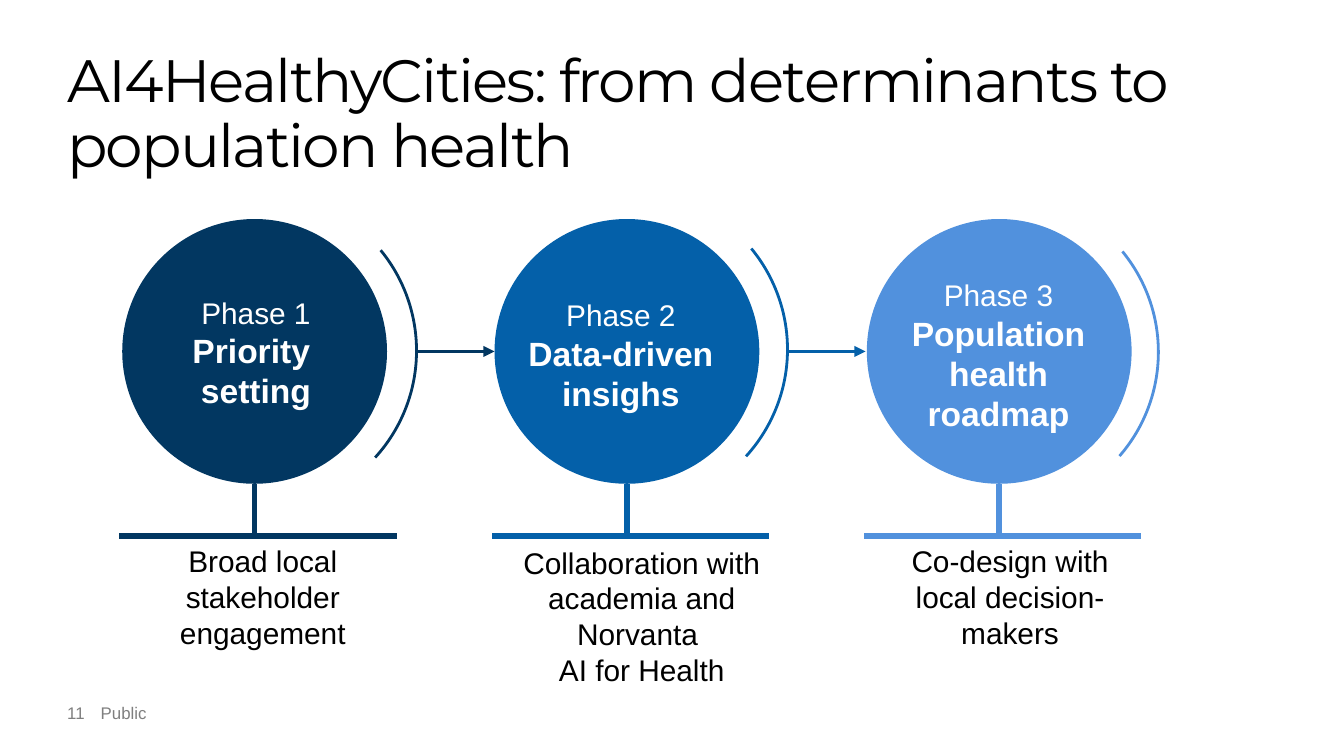
from dataclasses import dataclass

from lxml.etree import SubElement
from pptx import Presentation
from pptx.dml.color import RGBColor
from pptx.enum.shapes import MSO_CONNECTOR, MSO_SHAPE
from pptx.enum.text import MSO_ANCHOR, MSO_AUTO_SIZE, PP_ALIGN
from pptx.oxml.ns import qn
from pptx.shapes.connector import Connector
from pptx.slide import Slide
from pptx.text.text import TextFrame
from pptx.util import Inches, Pt

COLORS = {
    "navy": "023761",
    "blue": "0460A9",
    "sky": "5191DD",
    "black": "000000",
    "white": "FFFFFF",
    "gray": "7F7F7F",
}

LEFT, TOP, SIZE = 0.91, 1.63, 1.97
PITCH = 2.77
BAR_TOP, BAR_WIDTH = 3.99, 2.02
ARC_SIZE = 2.36
ARROW = 0.58

Box = tuple[float, float, float, float]
Pair = tuple[float, float]


@dataclass
class Phase:
    color: str
    lines: list[str]
    head: Box
    note: str
    place: Box
    spot: Pair
    sweep: Pair


PHASES = [
    Phase("navy", ["Phase 1", "Priority ", "setting"], (1.12, 2.14, 1.57, 1.01),
          "Broad local stakeholder engagement", (0.91, 3.99, 2.09, 0.91),
          (0.74, 1.43), (192.41, 25.41)),
    Phase("blue", ["Phase 2", "Data-driven insighs"], (3.74, 2.16, 1.76, 0.98),
          "Collaboration with academia and Norvanta \nAI for Health",
          (3.68, 4, 2.19, 1.18), (3.5, 1.42), (192.31, 25.44)),
    Phase("sky", ["Phase 3", "Population health roadmap"], (6.55, 2.01, 1.76, 1.28),
          "Co-design with local decision-makers", (6.47, 3.99, 2.09, 0.91),
          (6.26, 1.44), (192.39, 24.6)),
]


def rgb(name: str) -> RGBColor:
    return RGBColor.from_string(COLORS[name])


def clear_insets(frame: TextFrame) -> None:
    frame.margin_left = frame.margin_right = 0
    frame.margin_top = frame.margin_bottom = 0


def add_text(slide: Slide, box: Box, lines: list[str], size: int, color: str) -> TextFrame:
    frame = slide.shapes.add_textbox(*map(Inches, box)).text_frame
    frame.word_wrap = True
    for i, line in enumerate(lines):
        para = frame.add_paragraph() if i else frame.paragraphs[0]
        para.text = line
        para.alignment = PP_ALIGN.CENTER
        for run in para.runs:
            run.font.name = "Arial"
            run.font.size = Pt(size)
            run.font.color.rgb = rgb(color)
    frame.auto_size = MSO_AUTO_SIZE.SHAPE_TO_FIT_TEXT
    return frame


def add_line(slide: Slide, start: Pair, end: Pair, color: str, width: float) -> Connector:
    line = slide.shapes.add_connector(
        MSO_CONNECTOR.STRAIGHT, *map(Inches, (*start, *end)))
    line.line.color.rgb = rgb(color)
    line.line.width = Pt(width)
    SubElement(line._element.spPr, qn("a:effectLst"))
    return line


def add_phase(slide: Slide, phase: Phase, left: float, last: bool) -> None:
    color = phase.color
    mid_x, mid_y = left + SIZE / 2, TOP + SIZE / 2
    disc = slide.shapes.add_shape(
        MSO_SHAPE.OVAL, *map(Inches, (left, TOP, SIZE, SIZE)))
    disc.shadow.inherit = False
    disc.fill.solid()
    disc.fill.fore_color.rgb = rgb(color)
    disc.line.fill.background()

    add_line(slide, (mid_x, TOP + SIZE), (mid_x, BAR_TOP), color, 3)
    bar = add_line(slide, (left, BAR_TOP), (left + BAR_WIDTH, BAR_TOP), color, 3)
    bar.line._get_or_add_ln().set("cap", "sq")

    arc = slide.shapes.add_shape(
        MSO_SHAPE.ARC, *map(Inches, (*phase.spot, ARC_SIZE, ARC_SIZE)))
    arc.shadow.inherit = False
    arc.adjustments[0], arc.adjustments[1] = phase.sweep
    arc.fill.background()
    arc.line.color.rgb = rgb(color)
    arc.line.width = Pt(1.5)

    if not last:
        edge = phase.spot[0] + ARC_SIZE
        arrow = add_line(slide, (edge, mid_y), (edge + ARROW, mid_y), color, 1.5)
        SubElement(arrow.line._get_or_add_ln(), qn("a:tailEnd"), type="triangle")

    head = add_text(slide, phase.head, phase.lines, 16, "white")
    for para in head.paragraphs[1:]:
        for run in para.runs:
            run.font.size = Pt(18)
            run.font.bold = True
    add_text(slide, phase.place, [phase.note], 16, "black")


def add_title(slide: Slide, text: str) -> None:
    title = slide.shapes.title
    title.left, title.top, title.width, title.height = map(Inches, (0.5, 0.38, 9, 1.05))
    frame = title.text_frame
    frame.text = text
    frame.word_wrap = True
    frame.auto_size = MSO_AUTO_SIZE.NONE
    frame.vertical_anchor = MSO_ANCHOR.TOP
    clear_insets(frame)
    para = frame.paragraphs[0]
    para.alignment = PP_ALIGN.LEFT
    para.line_spacing = 0.9
    font = para.runs[0].font
    font.name = "Montserrat"
    font.size = Pt(32)
    font.color.rgb = rgb("black")
    para.runs[0]._r.get_or_add_rPr().set("spc", "-100")


def add_footer(slide: Slide, box: Box, text: str) -> None:
    frame = add_text(slide, box, [text], 9, "gray")
    frame.auto_size = MSO_AUTO_SIZE.NONE
    frame.paragraphs[0].alignment = PP_ALIGN.LEFT
    clear_insets(frame)


def main() -> None:
    deck = Presentation()
    deck.slide_width, deck.slide_height = Inches(10), Inches(10 * 9 / 16)
    slide = deck.slides.add_slide(deck.slide_layouts[5])
    add_title(slide, "AI4HealthyCities: from determinants to population health")
    add_footer(slide, (0.5, 5.23, 0.25, 0.25), "11")
    add_footer(slide, (0.75, 5.23, 6.37, 0.25), "Public")
    for i, phase in enumerate(PHASES):
        add_phase(slide, phase, LEFT + i * PITCH, i == len(PHASES) - 1)
    deck.save("out.pptx")


if __name__ == "__main__":
    main()
